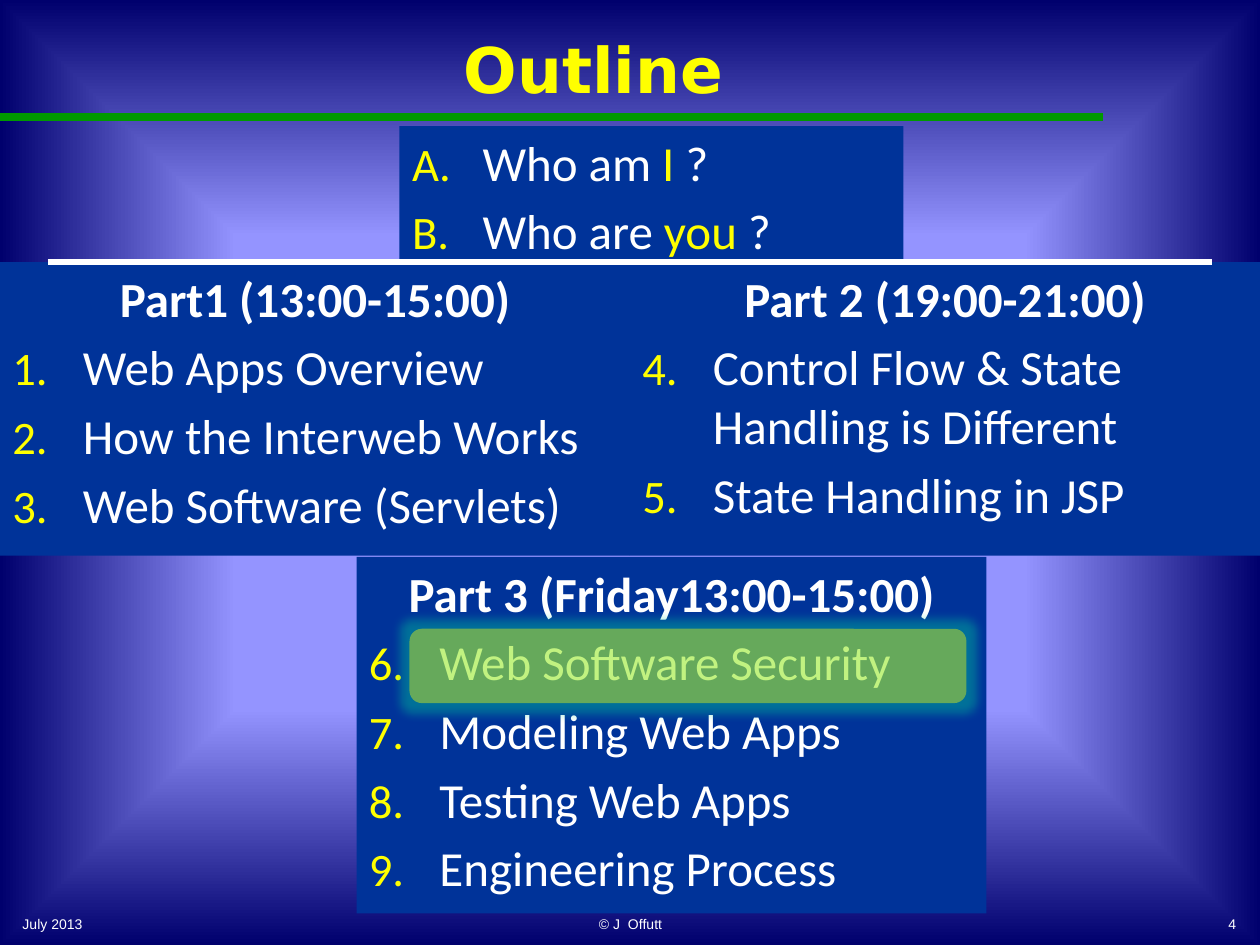
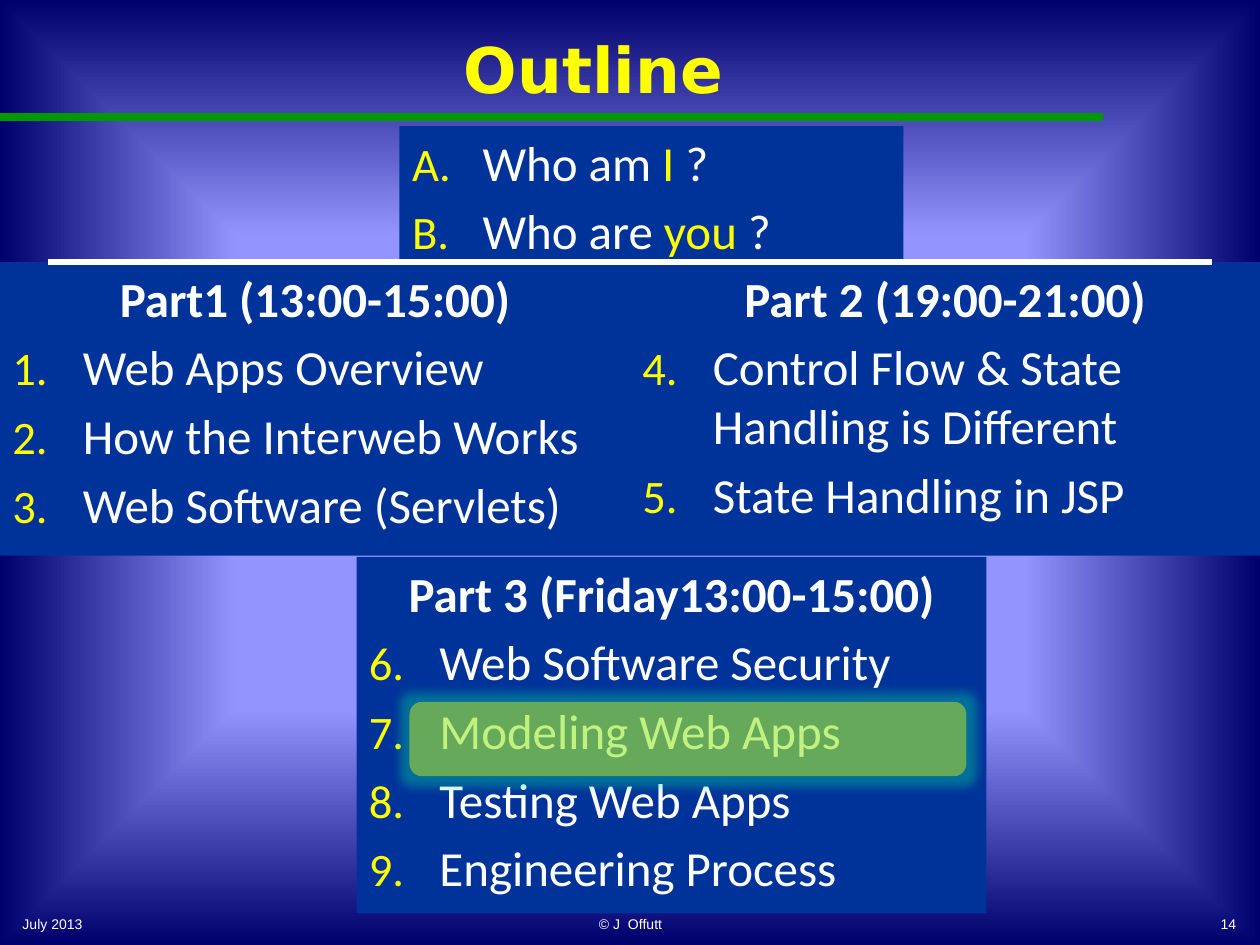
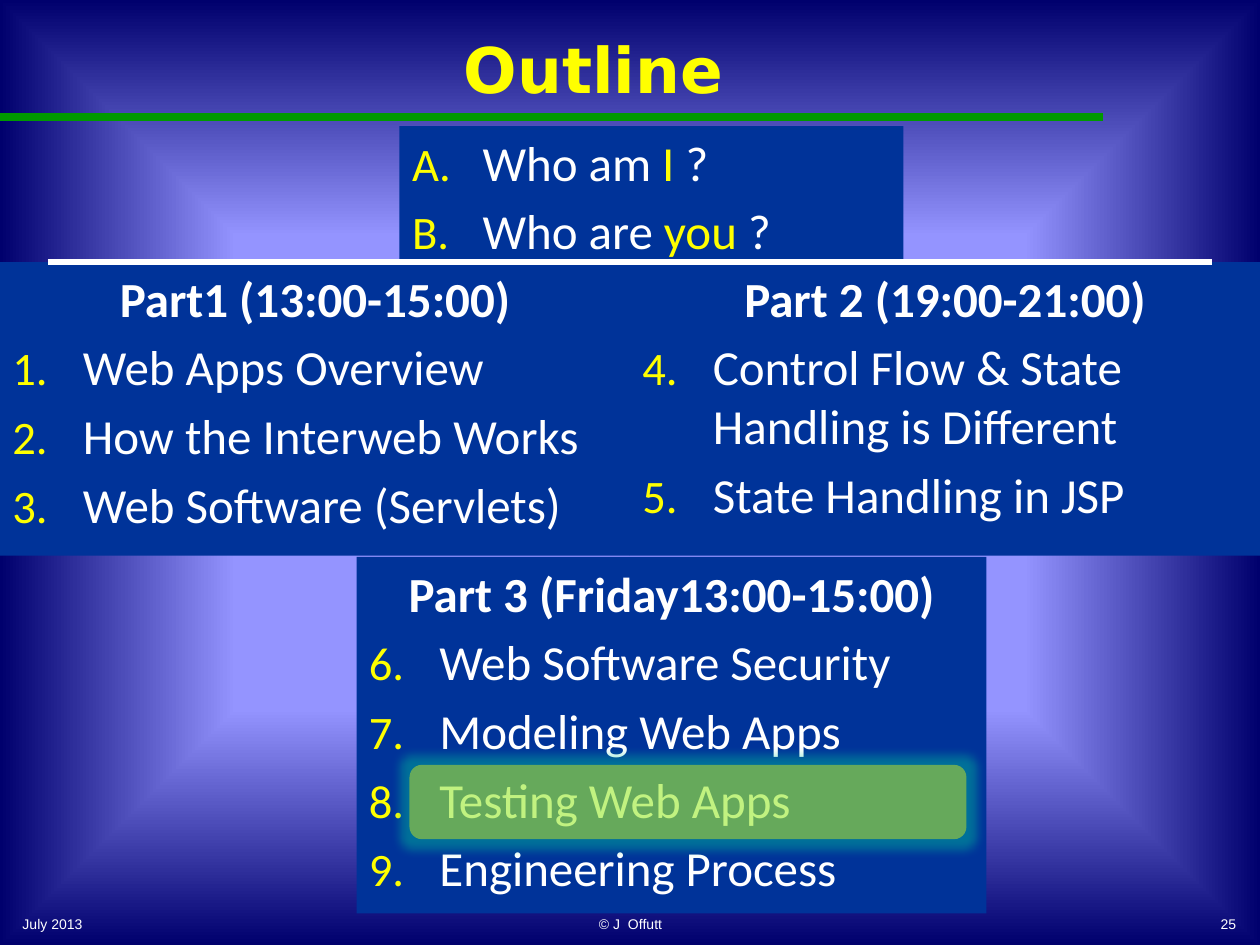
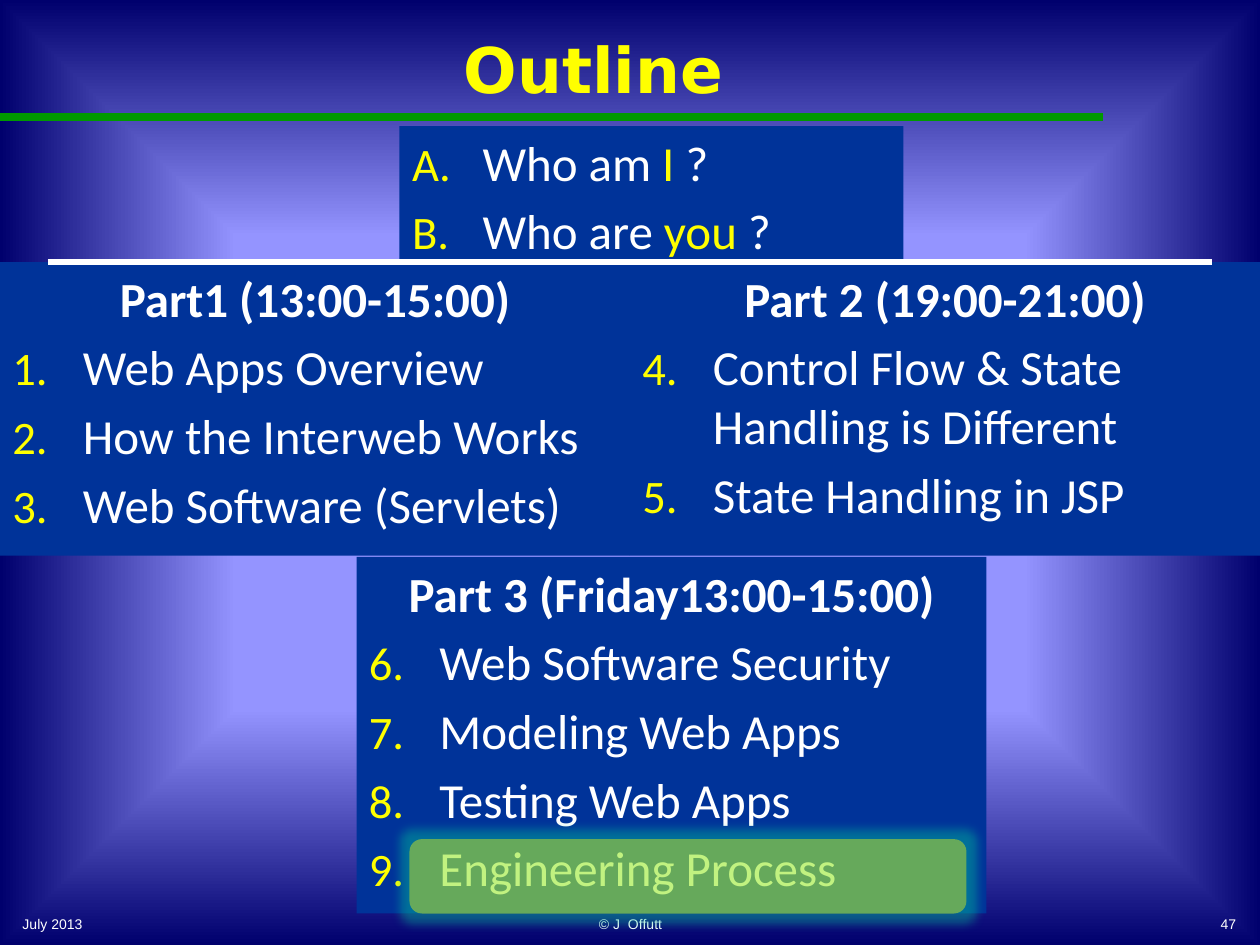
"""Builds the four outline slides of a web software lecture, each marking the next topic."""
from lxml import etree
from pptx import Presentation
from pptx.dml.color import RGBColor
from pptx.enum import shapes, text
from pptx.oxml import ns
from pptx.util import Inches, Pt

COLORS = {"white": "FFFFFF", "yellow": "FFFF00", "panel": "003399", "rule": "009900",
          "glow": "00CC99", "bg_center": "9494FF", "bg_edge": "00006D"}

TITLE = "Outline"
INTRO = [
    [("Who am ", "white"), ("I", "yellow"), (" ?", "white")],
    [("Who are ", "white"), ("you", "yellow"), (" ?", "white")],
]
PARTS = [
    {"heading": "Part1 (13:00-15:00)", "box": (0, 2.08, 5, 2.33), "start": 1,
     "topics": ["Web Apps Overview", "How the Interweb Works", "Web Software (Servlets)"]},
    {"heading": "Part 2 (19:00-21:00)", "box": (5, 2.08, 5, 2.33), "start": 4,
     "topics": ["Control Flow & State Handling is Different", "State Handling in JSP"]},
    {"heading": "Part 3 (Friday13:00-15:00)", "box": (2.83, 4.42, 5, 2.83), "start": 6,
     "topics": ["Web Software Security", "Modeling Web Apps", "Testing Web Apps",
                "Engineering Process"]},
]
SLIDES = [("4", 4.99), ("14", 5.57), ("25", 6.07), ("47", 6.66)]
DATE, COPYRIGHT = "July 2013", "© J  Offutt"
ALIGN = text.PP_ALIGN


def rgb(name):
    return RGBColor.from_string(COLORS[name])


def add_xml(parent, xml):
    root = etree.fromstring(f'<root {ns.nsdecls("a")}>{xml}</root>')
    for child in list(root):
        parent.append(child)


def place(sp, box):
    sp.left, sp.top, sp.width, sp.height = map(Inches, box)


def add_run(p, words, color="white", size=28, font="Calibri", bold=False):
    r = p.add_run()
    r.text = words
    r.font.size, r.font.name, r.font.bold = Pt(size), font, bold
    r.font.color.rgb = rgb(color)


def next_paragraph(tf):
    return tf.paragraphs[0] if not tf.paragraphs[0].runs else tf.add_paragraph()


def add_numbered(tf, runs, scheme, start=1):
    p = next_paragraph(tf)
    p.alignment = ALIGN.LEFT
    pPr = p._p.get_or_add_pPr()
    pPr.set("marL", str(Inches(0.56)))
    pPr.set("indent", str(-Inches(0.56)))
    space = 0 if len(tf.paragraphs) == 1 else 20000
    add_xml(pPr, f'<a:spcBef><a:spcPct val="{space}"/></a:spcBef>'
                 f'<a:buClr><a:srgbClr val="{COLORS["yellow"]}"/></a:buClr>'
                 '<a:buSzPct val="95000"/><a:buFont typeface="+mj-lt"/>'
                 f'<a:buAutoNum type="{scheme}" startAt="{start}"/>')
    for words, color in runs:
        add_run(p, words, color)


def fill_panel(sp):
    sp.fill.solid()
    sp.fill.fore_color.rgb = rgb("panel")
    sp.line.fill.background()
    sp.text_frame.word_wrap = True
    sp.text_frame.vertical_anchor = text.MSO_ANCHOR.TOP
    sp.text_frame.auto_size = text.MSO_AUTO_SIZE.NONE


def add_line(s, x1, x2, y, color, width):
    line = s.shapes.add_connector(shapes.MSO_CONNECTOR.STRAIGHT,
                                  Inches(x1), Inches(y), Inches(x2), Inches(y))
    line.line.color.rgb = rgb(color)
    line.line.width = Pt(width)
    add_xml(line.element.spPr, "<a:effectLst/>")
    return line


def style_master(prs, s):
    master = prs.slide_master
    master.background.fill.solid()
    bg = master.element.xpath("p:cSld/p:bg/p:bgPr")[0]
    bg.remove(bg[0])
    add_xml(bg, '<a:gradFill rotWithShape="0"><a:gsLst>'
                f'<a:gs pos="50000"><a:srgbClr val="{COLORS["bg_center"]}"/></a:gs>'
                f'<a:gs pos="100000"><a:srgbClr val="{COLORS["bg_edge"]}"/></a:gs></a:gsLst>'
                '<a:path path="shape"><a:fillToRect l="50000" t="50000" r="50000" b="50000"/>'
                '</a:path></a:gradFill>')
    bg.insert(0, bg[-1])
    rule = add_line(s, 0, 8.75, 0.93, "rule", 4.5)
    rule.element.xpath("p:nvCxnSpPr/p:cNvPr")[0].set("id", "20")
    master.element.xpath("p:cSld/p:spTree")[0].append(rule.element)


def add_title(s):
    title = s.shapes.title
    place(title, (0.17, 0.08, 9.08, 0.92))
    tf = title.text_frame
    tf.vertical_anchor = text.MSO_ANCHOR.MIDDLE
    tf.auto_size = text.MSO_AUTO_SIZE.NONE
    tf.paragraphs[0].alignment = ALIGN.CENTER
    add_run(tf.paragraphs[0], TITLE, "yellow", 36, "DejaVu Sans", True)


def add_intro(s):
    body = s.placeholders[1]
    place(body, (3.17, 1, 4, 1.08))
    fill_panel(body)
    for runs in INTRO:
        add_numbered(body.text_frame, runs, "alphaUcPeriod")


def add_footer(s, number):
    for words, left, width, align in [(DATE, 0.08, 2.08, ALIGN.LEFT),
                                      (COPYRIGHT, 3.42, 3.17, ALIGN.CENTER),
                                      (number, 7.83, 2.08, ALIGN.RIGHT)]:
        box = s.shapes.add_textbox(*map(Inches, (left, 7.17, width, 0.33)))
        tf = box.text_frame
        tf.word_wrap = True
        tf.vertical_anchor = text.MSO_ANCHOR.MIDDLE
        tf.paragraphs[0].alignment = align
        add_run(tf.paragraphs[0], words, size=8, font="Arial")


def add_part(s, part):
    panel = s.shapes.add_shape(shapes.MSO_SHAPE.RECTANGLE, *map(Inches, part["box"]))
    panel.shadow.inherit = False
    fill_panel(panel)
    tf = panel.text_frame
    p = next_paragraph(tf)
    p.alignment = ALIGN.CENTER
    add_run(p, part["heading"], bold=True)
    for topic in part["topics"]:
        add_numbered(tf, [(topic, "white")], "arabicPeriod", part["start"])


def add_highlight(s, top):
    mark = s.shapes.add_shape(shapes.MSO_SHAPE.ROUNDED_RECTANGLE,
                              *map(Inches, (3.25, top, 4.42, 0.59)))
    mark.fill.solid()
    mark.fill.fore_color.rgb = rgb("yellow")
    add_xml(mark.element.xpath("p:spPr/a:solidFill/a:srgbClr")[0], '<a:alpha val="40000"/>')
    mark.line.fill.background()
    mark.shadow.inherit = False
    add_xml(mark.element.xpath("p:spPr/a:effectLst")[0],
            f'<a:glow rad="{Pt(11)}"><a:srgbClr val="{COLORS["glow"]}">'
            '<a:alpha val="40000"/></a:srgbClr></a:glow>')


def main():
    prs = Presentation()
    prs.slide_width, prs.slide_height = Inches(10), Inches(7.5)
    for i, (number, highlight_top) in enumerate(SLIDES):
        s = prs.slides.add_slide(prs.slide_layouts[1])
        if i == 0:
            style_master(prs, s)
        add_intro(s)
        add_title(s)
        add_footer(s, number)
        for part in PARTS[:2]:
            add_part(s, part)
        add_line(s, 0.38, 9.62, 2.08, "white", 3)
        add_part(s, PARTS[2])
        add_highlight(s, highlight_top)
    prs.save("out.pptx")


if __name__ == "__main__":
    main()
